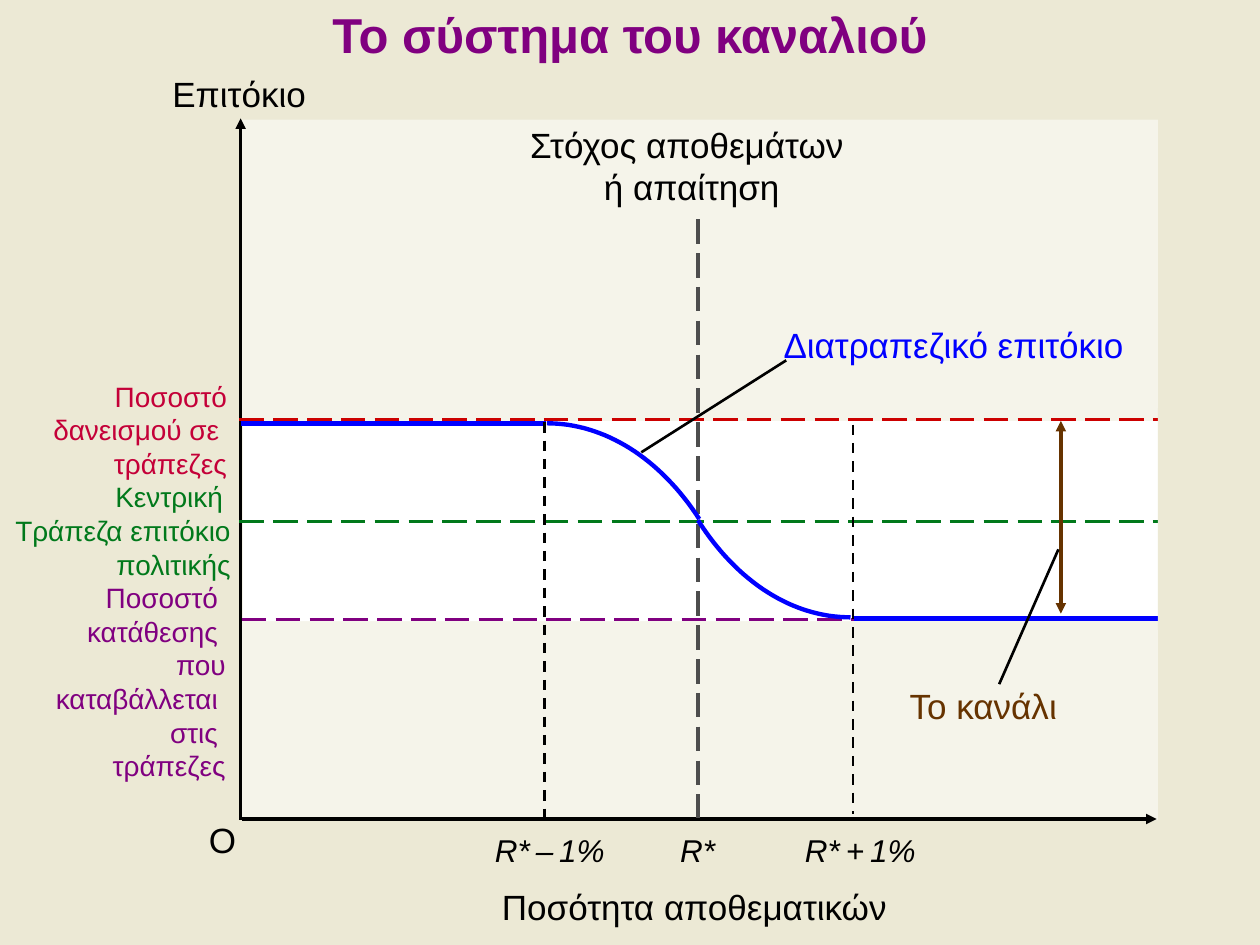
from dataclasses import dataclass
from lxml import etree
from pptx import Presentation, util as u
from pptx.dml.color import RGBColor
from pptx.enum import dml, shapes, text
from pptx.oxml import ns

COLS, ROWS = 100, 75
UNIT = u.Inches(0.1)
FONT = "Arial"
HUES = {
    "sand": "ECE9D5", "white": "FFFFFF", "black": "000000", "gray": "4D4D4D",
    "red": "CC0000", "rose": "C40038", "green": "01791B", "plum": "800080",
    "blue": "0000FF", "brown": "663300",
}
LONG, DASH = dml.MSO_LINE.LONG_DASH, dml.MSO_LINE.DASH
LEFT, MID, RIGHT = text.PP_ALIGN.LEFT, text.PP_ALIGN.CENTER, text.PP_ALIGN.RIGHT


@dataclass
class Panel:
    box: tuple
    hue: str
    alpha: int = 100


@dataclass
class Rule:
    start: tuple
    end: tuple
    hue: str = "black"
    width: float = 1.5
    dash: object = None
    ends: tuple = ()


@dataclass
class Label:
    box: tuple
    words: object
    hue: str = "black"
    size: int = 20
    align: object = LEFT
    wrap: bool = False
    bold: bool = False
    slant: bool = False


def grid(*cells: float) -> list:
    return [round(cell * UNIT) for cell in cells]


def color(hue: str) -> RGBColor:
    return RGBColor.from_string(HUES[hue])


def add(parent, tag: str, **attrs):
    return etree.SubElement(parent, ns.qn(tag), attrs)


def draw_panel(slide, item: Panel) -> None:
    shape = slide.shapes.add_shape(shapes.MSO_SHAPE.RECTANGLE, *grid(*item.box))
    shape.shadow.inherit = False
    shape.fill.solid()
    shape.fill.fore_color.rgb = color(item.hue)
    shape.line.fill.background()
    if item.alpha < 100:
        tint = shape._element.spPr.find(".//" + ns.qn("a:srgbClr"))
        add(tint, "a:alpha", val=str(item.alpha * 1000))


def draw_rule(slide, item: Rule) -> None:
    rule = slide.shapes.add_connector(
        shapes.MSO_CONNECTOR.STRAIGHT, *grid(*item.start, *item.end))
    rule.line.color.rgb = color(item.hue)
    rule.line.width = u.Pt(item.width)
    if item.dash:
        rule.line.dash_style = item.dash
    for end in item.ends:
        add(rule.line._get_or_add_ln(), f"a:{end}End", type="triangle")
    add(rule._element.spPr, "a:effectLst")


def draw_curve(slide, knots: tuple, steps: int = 32) -> None:
    def point(t: float) -> list:
        s = 1 - t
        parts = (s ** 3, 3 * s * s * t, 3 * s * t * t, t ** 3)
        return grid(*(sum(p * k[axis] for p, k in zip(parts, knots))
                      for axis in (0, 1)))

    pen = slide.shapes.build_freeform(*point(0), scale=1.0)
    pen.add_line_segments([point(n / steps) for n in range(1, steps + 1)], close=False)
    curve = pen.convert_to_shape()
    curve.shadow.inherit = False
    curve.fill.background()
    curve.line.color.rgb = color("blue")
    curve.line.width = u.Pt(2.5)


def draw_label(slide, item: Label):
    box = slide.shapes.add_textbox(*grid(*item.box))
    frame = box.text_frame
    frame.word_wrap = item.wrap
    if isinstance(item.words, str):
        frame.text = item.words
    else:
        for word in item.words:
            run = frame.paragraphs[0].add_run()
            run.text = word
            if word == " ":
                run.font.size = u.Pt(12)
    for para in frame.paragraphs:
        para.alignment = item.align
        font = para.font
        font.name, font.size = FONT, u.Pt(item.size)
        font.bold, font.italic = item.bold, item.slant
        font.color.rgb = color(item.hue)
    return box


def draw_title(slide) -> None:
    box = draw_label(slide, Label((0, 0, COLS, 5.5), "Το σύστημα του καναλιού",
                                  "plum", 28, MID, wrap=True, bold=True))
    frame = box.text_frame
    frame.vertical_anchor = text.MSO_ANCHOR.BOTTOM
    props = frame.paragraphs[0].runs[0].font._element
    glow = add(add(props, "a:effectLst"), "a:outerShdw",
               dist="35921", dir="2700000", algn="tl")
    add(glow, "a:srgbClr", val=HUES["black"])


PANELS = [
    Panel((19, 9.5, 72.9, 55.6), "white", 50),
    Panel((19.3, 33.4, 72.6, 15.9), "white"),
]
MASK = Panel((91.9, 32.4, 3.3, 17.6), "sand")
RULES = [
    Rule((19.1, 9.4), (19.1, 65.1), width=2, ends=("head",)),
    Rule((19.2, 65), (91.8, 65), width=2, ends=("tail",)),
    Rule((19, 33.3), (92.9, 33.3), "red", 1.75, LONG),
    Rule((19.2, 49.2), (92.3, 49.2), "plum", 1.75, LONG),
    Rule((19, 41.4), (92.5, 41.4), "green", 1.75, LONG),
    Rule((19.1, 33.6), (43.3, 33.6), "blue", 2.5),
    Rule((67.8, 49.1), (91.9, 49.1), "blue", 2.5),
    Rule((50.9, 35.9), (62.4, 28.6)),
    Rule((67.7, 33.7), (67.7, 64.6), dash=DASH),
    Rule((55.4, 17.4), (55.4, 64.9), "gray", 1.75, LONG),
    Rule((43.2, 33.5), (43.2, 64.9), dash=DASH),
    Rule((84.2, 33.4), (84.2, 48.7), "brown", 2, ends=("head", "tail")),
    Rule((84, 43.6), (79.3, 54.3)),
]
CURVES = [
    ((43.4, 33.6), (48, 33.6), (52.4, 36.4), (55.5, 41.2)),
    ((67.5, 49), (62.9, 49), (58.5, 46.2), (55.4, 41.3)),
]
LABELS = [
    Label((15.6, 64.5, 4.1, 4.3), "O"),
    Label((12.7, 5.3, 12.7, 4.3), "Επιτόκιο"),
    Label((38.7, 69.8, 33.6, 4.3), "Ποσότητα αποθεματικών ", align=MID),
    Label((3, 29.6, 16, 9.1), "Ποσοστό\nδανεισμού σε \vτράπεζες", "rose", 16, RIGHT),
    Label((3.2, 45.6, 15.7, 17.1),
          "Ποσοστό \nκατάθεσης \nπου\nκαταβάλλεται \nστις \nτράπεζες",
          "plum", 16, RIGHT),
    Label((0, 37.6, 19.3, 9.1), "Κεντρική \nΤράπεζα επιτόκιο\nπολιτικής",
          "green", 16, RIGHT),
    Label((61.2, 25.2, 29.2, 4.4), "Διατραπεζικό επιτόκιο", "blue"),
    Label((41, 9.3, 27.8, 7.8), "Στόχος αποθεμάτων \vή απαίτηση", align=MID),
    Label((53, 65.5, 4.8, 4), "R*", size=18, slant=True),
    Label((62.9, 65.5, 10.8, 4), ("R*", " ", "+", " ", "1%"), size=18, slant=True),
    Label((38.3, 65.5, 10.7, 4), ("R*", " ", "–", " ", "1%"), size=18, slant=True),
    Label((71.2, 53.8, 13.8, 4.4), "Το κανάλι", "brown"),
]


def main() -> None:
    deck = Presentation()
    deck.slide_width, deck.slide_height = grid(COLS, ROWS)
    slide = deck.slides.add_slide(deck.slide_layouts[6])
    slide.background.fill.solid()
    slide.background.fill.fore_color.rgb = color("sand")
    for panel in PANELS:
        draw_panel(slide, panel)
    draw_title(slide)
    for rule in RULES:
        draw_rule(slide, rule)
    for knots in CURVES:
        draw_curve(slide, knots)
    for label in LABELS:
        draw_label(slide, label)
    draw_panel(slide, MASK)
    deck.save("out.pptx")


if __name__ == "__main__":
    main()
